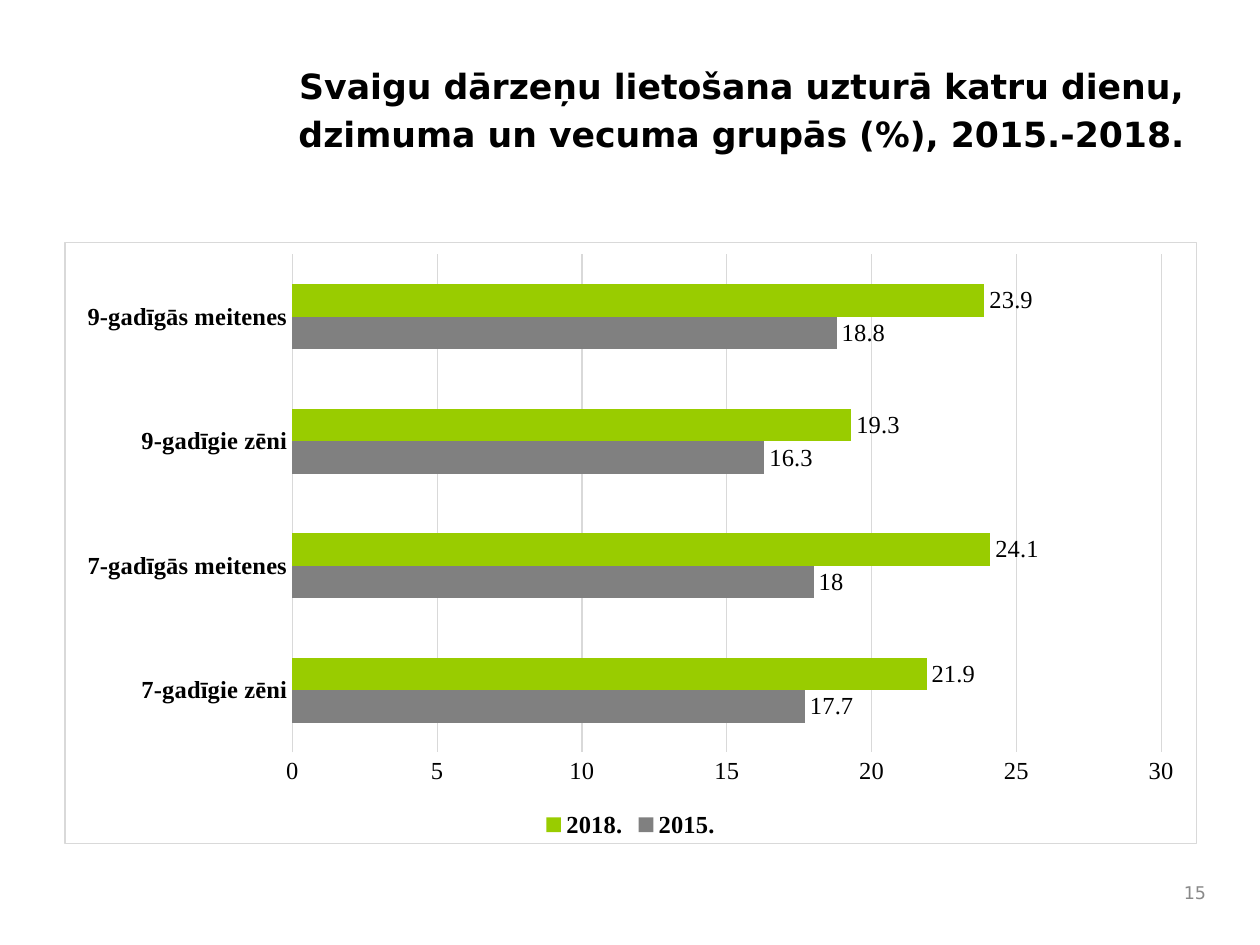
from lxml import etree
from pptx import Presentation
from pptx.chart.data import CategoryChartData
from pptx.dml.color import RGBColor
from pptx.enum.chart import XL_CHART_TYPE, XL_LABEL_POSITION, XL_LEGEND_POSITION, XL_TICK_MARK
from pptx.enum.text import MSO_ANCHOR, PP_ALIGN
from pptx.oxml import parse_xml
from pptx.util import Inches, Pt

BAR_CLUSTERED = XL_CHART_TYPE.BAR_CLUSTERED
OUTSIDE_END = XL_LABEL_POSITION.OUTSIDE_END
LEGEND_BOTTOM = XL_LEGEND_POSITION.BOTTOM
NO_TICK = XL_TICK_MARK.NONE
CENTER, RIGHT = PP_ALIGN.CENTER, PP_ALIGN.RIGHT
TOP, MIDDLE = MSO_ANCHOR.TOP, MSO_ANCHOR.MIDDLE

TITLE = "Svaigu dārzeņu lietošana uzturā katru dienu, dzimuma un vecuma grupās (%), 2015.-2018. "
PAGE_NUMBER = "15"
GROUPS = ["7-gadīgie zēni", "7-gadīgās meitenes", "9-gadīgie zēni", "9-gadīgās meitenes"]
YEARS = [
    ("2015.", "808080", [17.7, 18, 16.3, 18.8]),
    ("2018.", "99CC00", [21.9, 24.1, 19.3, 23.9]),
]
HEADING_FONT, CHART_FONT = "DejaVu Sans", "Times New Roman"
BLACK, GRAY, RULE = "000000", "898989", "D9D9D9"
TITLE_AREA = (2.27, 0.42, 7.23, 1.13)
CHART_AREA = (0.51, 1.92, 8.99, 4.78)
NUMBER_AREA = (9.24, 6.92, 0.43, 0.33)


def rgb(value):
    return RGBColor.from_string(value)


def style_font(font, name, size, color, bold=False):
    font.name, font.size, font.bold = name, Pt(size), bold
    font.color.rgb = rgb(color)


def style_rule(line):
    line.color.rgb = rgb(RULE)
    line.width = Pt(0.75)


def add_text(slide, area, text, size, color, align, anchor, bold=False):
    frame = slide.shapes.add_textbox(*map(Inches, area)).text_frame
    frame.word_wrap = True
    frame.vertical_anchor = anchor
    frame.text = text
    paragraph = frame.paragraphs[0]
    paragraph.alignment = align
    style_font(paragraph.runs[0].font, HEADING_FONT, size, color, bold)
    return paragraph


def add_border(chart):
    """Frame the whole chart area with a thin rule."""
    border = parse_xml(
        '<c:spPr xmlns:c="http://schemas.openxmlformats.org/drawingml/2006/chart"'
        ' xmlns:a="http://schemas.openxmlformats.org/drawingml/2006/main"><a:noFill/>'
        f'<a:ln w="{Pt(0.75)}"><a:solidFill><a:srgbClr val="{RULE}"/></a:solidFill></a:ln></c:spPr>'
    )
    plot_chart = chart.element.chart if hasattr(chart, "element") else chart._chartSpace.chart
    plot_chart.addnext(border)


def add_usage_chart(slide):
    data = CategoryChartData()
    data.categories = GROUPS
    for year, _, shares in YEARS:
        data.add_series(year, shares)
    chart = slide.shapes.add_chart(BAR_CLUSTERED, *map(Inches, CHART_AREA), data).chart
    style_font(chart.font, CHART_FONT, 14, BLACK)
    chart.has_title = False
    add_border(chart)

    plot = chart.plots[0]
    plot.gap_width, plot.overlap = 182, 0
    plot.vary_by_categories = False
    for series, (_, color, _) in zip(plot.series, YEARS):
        series.format.fill.solid()
        series.format.fill.fore_color.rgb = rgb(color)
        labels = series.data_labels
        labels.show_value = True
        labels.position = OUTSIDE_END
        style_font(labels.font, CHART_FONT, 14, BLACK)

    groups, percent = chart.category_axis, chart.value_axis
    for axis, bold in ((groups, True), (percent, False)):
        axis.major_tick_mark = axis.minor_tick_mark = NO_TICK
        style_font(axis.tick_labels.font, CHART_FONT, 14, BLACK, bold)
    style_rule(groups.format.line)
    percent.format.line.fill.background()
    percent.minimum_scale, percent.maximum_scale, percent.major_unit = 0, 30, 5
    style_rule(percent.major_gridlines.format.line)

    chart.has_legend = True
    chart.legend.position = LEGEND_BOTTOM
    chart.legend.include_in_layout = False
    style_font(chart.legend.font, CHART_FONT, 14, BLACK, True)


def main():
    deck = Presentation()
    deck.slide_width, deck.slide_height = Inches(10), Inches(7.5)
    slide = deck.slides.add_slide(deck.slide_layouts[6])
    title = add_text(slide, TITLE_AREA, TITLE, 19.8, BLACK, CENTER, TOP, True)
    title.line_spacing = 1.15
    title.space_after = Pt(12)
    add_usage_chart(slide)
    add_text(slide, NUMBER_AREA, PAGE_NUMBER, 10, GRAY, RIGHT, MIDDLE)
    deck.save("out.pptx")


if __name__ == "__main__":
    main()
